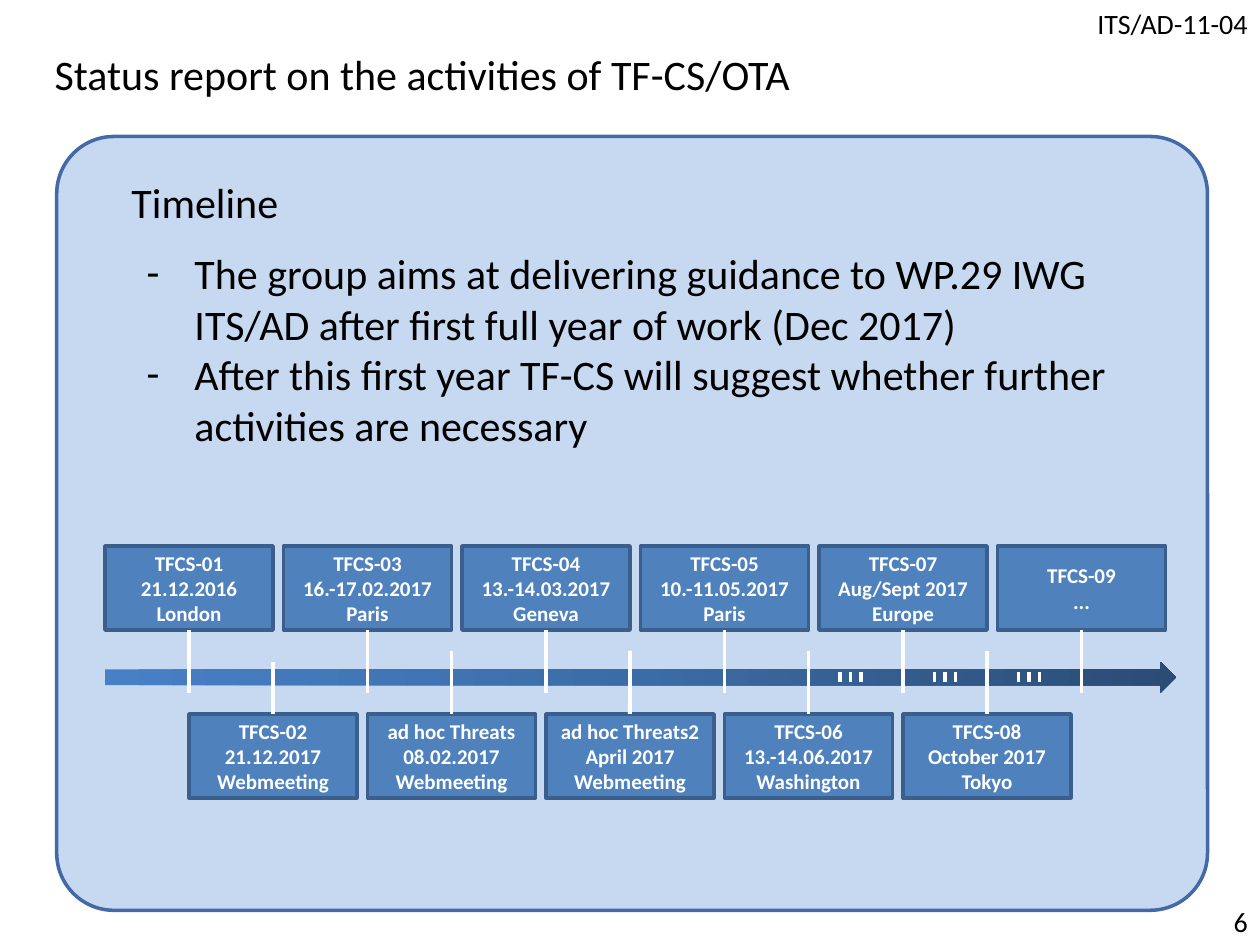
from copy import deepcopy
from pptx import Presentation
from pptx.dml.color import RGBColor
from pptx.enum.shapes import MSO_CONNECTOR, MSO_SHAPE
from pptx.enum.text import MSO_ANCHOR, MSO_AUTO_SIZE, PP_ALIGN
from pptx.oxml.ns import qn
from pptx.util import Inches, Pt
from lxml.etree import SubElement

FONT = "Calibri"
BLACK, WHITE = "000000", "FFFFFF"
PANEL_FILL, PANEL_EDGE = "C6D9F1", "4369A7"
BOX_FILL, BOX_EDGE = "4F81BD", "3A5F8C"
ARROW_STOPS = ((0, "4780C5"), (0.5, "3C6CA6"), (1, "2A4C75"))
BULLETS = (
    "The group aims at delivering guidance to WP.29 IWG ITS/AD after first full year of work (Dec 2017)",
    "After this first year TF-CS will suggest whether further activities are necessary",
)
UPPER_MEETINGS = (
    "TFCS-01\v21.12.2016\vLondon",
    "TFCS-03\v16.-17.02.2017\vParis",
    "TFCS-04\v13.-14.03.2017\vGeneva",
    "TFCS-05\v10.-11.05.2017\vParis",
    "TFCS-07\vAug/Sept 2017 Europe",
    "TFCS-09\v...",
)
LOWER_MEETINGS = (
    "TFCS-02\v21.12.2017\vWebmeeting",
    "ad hoc Threats\v08.02.2017\vWebmeeting",
    "ad hoc Threats2\vApril 2017\vWebmeeting",
    "TFCS-06\v13.-14.06.2017\vWashington",
    "TFCS-08\vOctober 2017\vTokyo",
)
PITCH, BOX_WIDTH, BOX_HEIGHT = 17, 16, 8
UPPER_LEFT, UPPER_TOP, LOWER_LEFT, LOWER_TOP = 10, 52, 18, 68
ELLIPSIS_CENTRES = (81, 90, 98)


def rgb(hex_colour):
    """Turn a hex string into a colour."""
    return RGBColor.from_string(hex_colour)


def grid(*cells):
    """Turn grid cells, twelve to the inch, into lengths."""
    return [Inches(cell / 12) for cell in cells]


class TimelineSlide:
    """Hold the style and the current slide, and draw its elements."""

    def __init__(self, presentation):
        """Add a title and content slide."""
        self.slide = presentation.slides.add_slide(presentation.slide_layouts[1])
        self.shapes = self.slide.shapes

    def style(self, paragraph, size, colour=BLACK, bold=False, align=PP_ALIGN.LEFT):
        """Format a whole paragraph."""
        paragraph.alignment = align
        paragraph.space_before = Pt(0)
        font = paragraph.font
        font.name, font.size, font.bold = FONT, Pt(size), bold
        font.color.rgb = rgb(colour)

    def place(self, shape, *cells):
        """Move a placeholder to grid cells and prepare its frame."""
        shape.left, shape.top, shape.width, shape.height = grid(*cells)
        frame = shape.text_frame
        frame.auto_size, frame.vertical_anchor = MSO_AUTO_SIZE.NONE, MSO_ANCHOR.TOP
        frame.word_wrap = True
        return frame

    def title(self, text):
        """Write the slide title."""
        frame = self.place(self.shapes.title, 4, 4, 110, 6)
        frame.text = text
        self.style(frame.paragraphs[0], 24)

    def corner_text(self, text, top):
        """Write a right-aligned label at the slide's right edge."""
        frame = self.shapes.add_textbox(*grid(100, top, 20, 4.4)).text_frame
        frame.word_wrap = True
        frame.text = text
        self.style(frame.paragraphs[0], 16, align=PP_ALIGN.RIGHT)

    def block(self, kind, cells, fill=None, edge=None):
        """Draw a preset shape with a flat fill and an edge."""
        shape = self.shapes.add_shape(kind, *grid(*cells))
        shape.shadow.inherit = False
        if fill:
            shape.fill.solid()
            shape.fill.fore_color.rgb = rgb(fill)
        if edge:
            shape.line.color.rgb = rgb(edge)
            shape.line.width = Pt(2)
        else:
            shape.line.fill.background()
        return shape

    def panel(self):
        """Draw the rounded panel behind everything else."""
        panel = self.block(MSO_SHAPE.ROUNDED_RECTANGLE, (5.4, 13, 109.6, 73.7), PANEL_FILL, PANEL_EDGE)
        panel.adjustments[0] = 0.074
        self.shapes._spTree.insert(2, panel._element)

    def body(self, heading, bullets):
        """Write the heading and the dashed list."""
        frame = self.place(self.slide.placeholders[1], 7, 16.2, 106.4, 30)
        frame.margin_left, frame.margin_right = Inches(0.08), 0
        frame.text = "\n".join((heading, *bullets))
        for number, paragraph in enumerate(frame.paragraphs):
            properties = paragraph._p.get_or_add_pPr()
            margin, indent = (0.88, -0.38) if number else (0.38, 0)
            properties.set("marL", str(Inches(margin)))
            properties.set("indent", str(Inches(indent)))
            if number:
                paragraph.level = 1
                SubElement(properties, qn("a:buFont"), typeface=FONT)
                SubElement(properties, qn("a:buChar"), char="-")
            else:
                SubElement(properties, qn("a:buNone"))
            self.style(paragraph, 24)
        frame.paragraphs[0].space_after = Pt(12)

    def arrow(self, *cells):
        """Draw the gradient time arrow."""
        arrow = self.block(MSO_SHAPE.RIGHT_ARROW, cells)
        arrow.fill.gradient()
        arrow.fill.gradient_angle = 0
        first = arrow._element.spPr.find(".//" + qn("a:gs"))
        first.addnext(deepcopy(first))
        for stop, (position, colour) in zip(arrow.fill.gradient_stops, ARROW_STOPS):
            stop.position = position
            stop.color.rgb = rgb(colour)

    def meeting(self, text, left, top):
        """Draw a meeting box."""
        box = self.block(MSO_SHAPE.RECTANGLE, (left, top, BOX_WIDTH, BOX_HEIGHT), BOX_FILL, BOX_EDGE)
        frame = box.text_frame
        frame.word_wrap, frame.vertical_anchor = True, MSO_ANCHOR.MIDDLE
        paragraph = frame.paragraphs[0]
        paragraph.text = text
        self.style(paragraph, 12, WHITE, True, PP_ALIGN.CENTER)
        return box

    def stroke(self, column, top, bottom):
        """Draw a white vertical line."""
        line = self.shapes.add_connector(MSO_CONNECTOR.STRAIGHT, *grid(column, top, column, bottom))
        line.line.color.rgb = rgb(WHITE)
        line.line.width = Pt(2.25)
        SubElement(line._element.spPr, qn("a:effectLst"))
        return line


def main():
    """Build and save the slide."""
    presentation = Presentation()
    presentation.slide_width, presentation.slide_height = grid(120, 90)
    page = TimelineSlide(presentation)
    page.panel()
    page.title("Status report on the activities of TF-CS/OTA")
    page.body("Timeline", BULLETS)
    page.corner_text("ITS/AD-11-04", 0)
    page.corner_text("6", 85.6)
    page.arrow(10, 63, 102, 3)
    for number, text in enumerate(UPPER_MEETINGS):
        left = UPPER_LEFT + number * PITCH
        box = page.meeting(text, left, UPPER_TOP)
        stem = page.stroke(left + BOX_WIDTH / 2, UPPER_TOP + BOX_HEIGHT, 66)
        stem.begin_connect(box, 2)
    for number, text in enumerate(LOWER_MEETINGS):
        left = LOWER_LEFT + number * PITCH
        box = page.meeting(text, left, LOWER_TOP)
        stem = page.stroke(left + BOX_WIDTH / 2, 62 if number else 63, LOWER_TOP)
        stem.end_connect(box, 0)
    for centre in ELLIPSIS_CENTRES:
        for offset in (-1, 0, 1):
            page.stroke(centre + offset, 64, 65)
    presentation.save("out.pptx")


if __name__ == "__main__":
    main()
